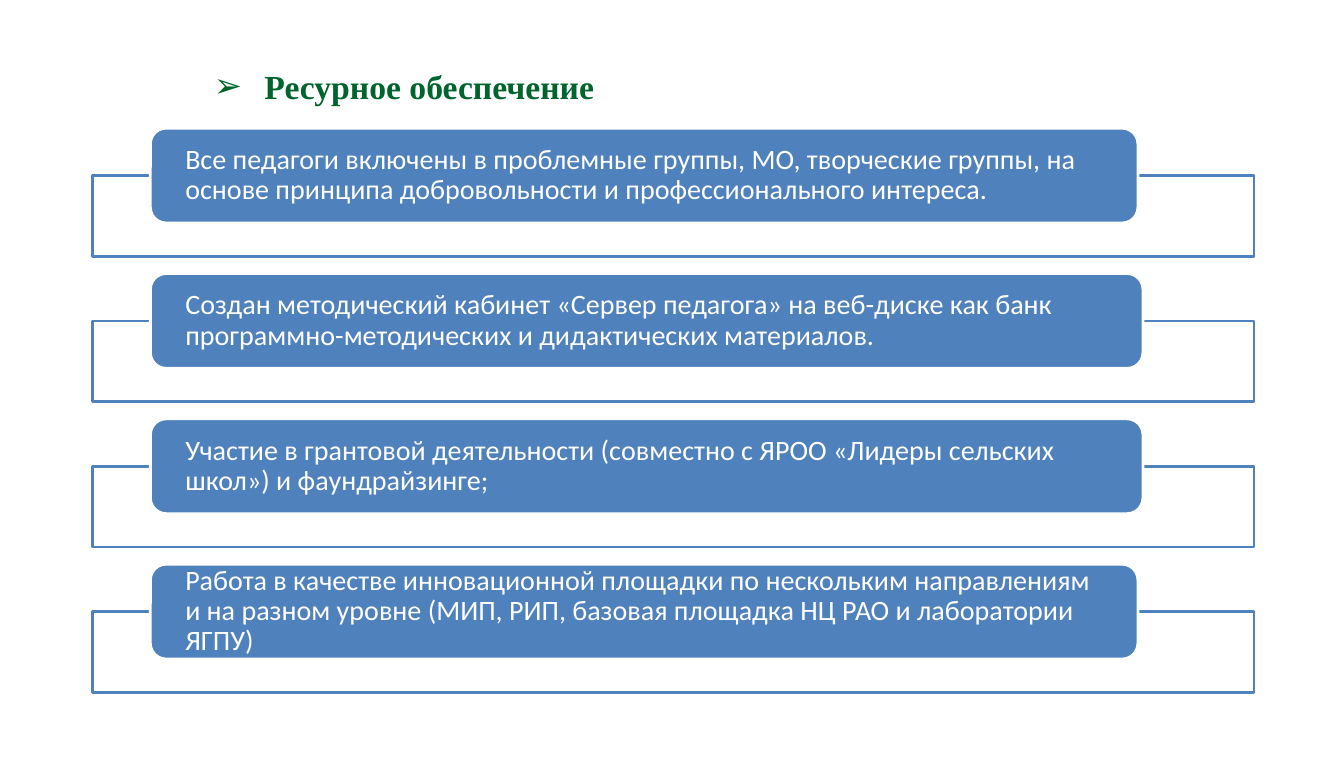
from lxml import etree
from pptx import Presentation
from pptx.dml.color import RGBColor
from pptx.enum.shapes import MSO_SHAPE
from pptx.enum.text import MSO_ANCHOR, PP_ALIGN
from pptx.oxml.ns import qn
from pptx.util import Inches, Pt

RECTANGLE = MSO_SHAPE.RECTANGLE
ROUNDED = MSO_SHAPE.ROUNDED_RECTANGLE
MIDDLE = MSO_ANCHOR.MIDDLE
LEFT = PP_ALIGN.LEFT

GREEN = RGBColor(0x00, 0x64, 0x2D)
BLUE = RGBColor(0x4F, 0x81, 0xBD)
WHITE = RGBColor(0xFF, 0xFF, 0xFF)

TITLE = "Ресурное обеспечение"
RESOURCES = [
    (73.48, "Все педагоги включены в проблемные группы, МО, творческие группы, "
            "на основе принципа добровольности и профессионального интереса."),
    (73.85, "Создан методический кабинет «Сервер педагога» на веб-диске как банк "
            "программно-методических и дидактических материалов."),
    (73.85, "Участие в грантовой деятельности (совместно с ЯРОО «Лидеры сельских "
            "школ») и фаундрайзинге;"),
    (73.48, "Работа в качестве инновационной площадки по нескольким направлениям "
            "и на разном уровне (МИП, РИП, базовая площадка НЦ РАО и лаборатории ЯГПУ)"),
]
FIRST_ROW = 16.93
ROW_STEP = 19.2
FRAME_DROP = 6.27


class ResourceSlide:
    """Draws titles, frames and bars on a slide divided into 100 columns and 100 rows."""

    def __init__(self, presentation):
        self.column = presentation.slide_width / 100
        self.row = presentation.slide_height / 100
        self.slide = presentation.slides.add_slide(presentation.slide_layouts[6])

    def place(self, left, top, width, height):
        return (round(left * self.column), round(top * self.row),
                round(width * self.column), round(height * self.row))

    def box(self, kind, fill, line, *area):
        shape = self.slide.shapes.add_shape(kind, *self.place(*area))
        shape.shadow.inherit = False
        shape.fill.solid()
        shape.fill.fore_color.rgb = fill
        shape.line.color.rgb = line
        shape.line.width = Pt(2)
        return shape

    def set_text(self, paragraph, text, name, size, color, bold=False):
        paragraph.text = text
        paragraph.alignment = LEFT
        font = paragraph.font
        font.name, font.size, font.bold = name, Pt(size), bold
        font.color.rgb = color

    def title(self, text, *area):
        frame = self.slide.shapes.add_textbox(*self.place(*area)).text_frame
        frame.word_wrap = True
        paragraph = frame.paragraphs[0]
        properties = paragraph._p.get_or_add_pPr()
        properties.set("marL", str(Inches(0.5)))
        properties.set("indent", str(-Inches(0.5)))
        etree.SubElement(properties, qn("a:buFont"), typeface="Arial")
        etree.SubElement(properties, qn("a:buChar"), char="➢")
        self.set_text(paragraph, text, "Times New Roman", 24, GREEN, True)

    def frame(self, *area):
        shape = self.box(RECTANGLE, WHITE, BLUE, *area)
        color = shape._element.spPr.find(qn("a:solidFill"))[0]
        etree.SubElement(color, qn("a:alpha"), val="90000")

    def bar(self, text, *area):
        frame = self.box(ROUNDED, BLUE, WHITE, *area).text_frame
        frame.word_wrap = True
        frame.vertical_anchor = MIDDLE
        frame.margin_left = frame.margin_right = Inches(0.3)
        frame.margin_top = frame.margin_bottom = 0
        paragraph = frame.paragraphs[0]
        paragraph.line_spacing = 0.9
        paragraph.space_after = Pt(7)
        self.set_text(paragraph, text, "Calibri", 20, WHITE)


def main():
    presentation = Presentation()
    presentation.slide_width = Inches(13.31)
    presentation.slide_height = Inches(7.5)
    page = ResourceSlide(presentation)
    page.title(TITLE, 15.18, 8, 78.06, 12.13)
    for index, (width, text) in enumerate(RESOURCES):
        top = FIRST_ROW + index * ROW_STEP
        page.frame(6.91, top + FRAME_DROP, 86.4, 10.67)
        page.bar(text, 11.19, top, width, 12.53)
    presentation.save("out.pptx")


if __name__ == "__main__":
    main()
